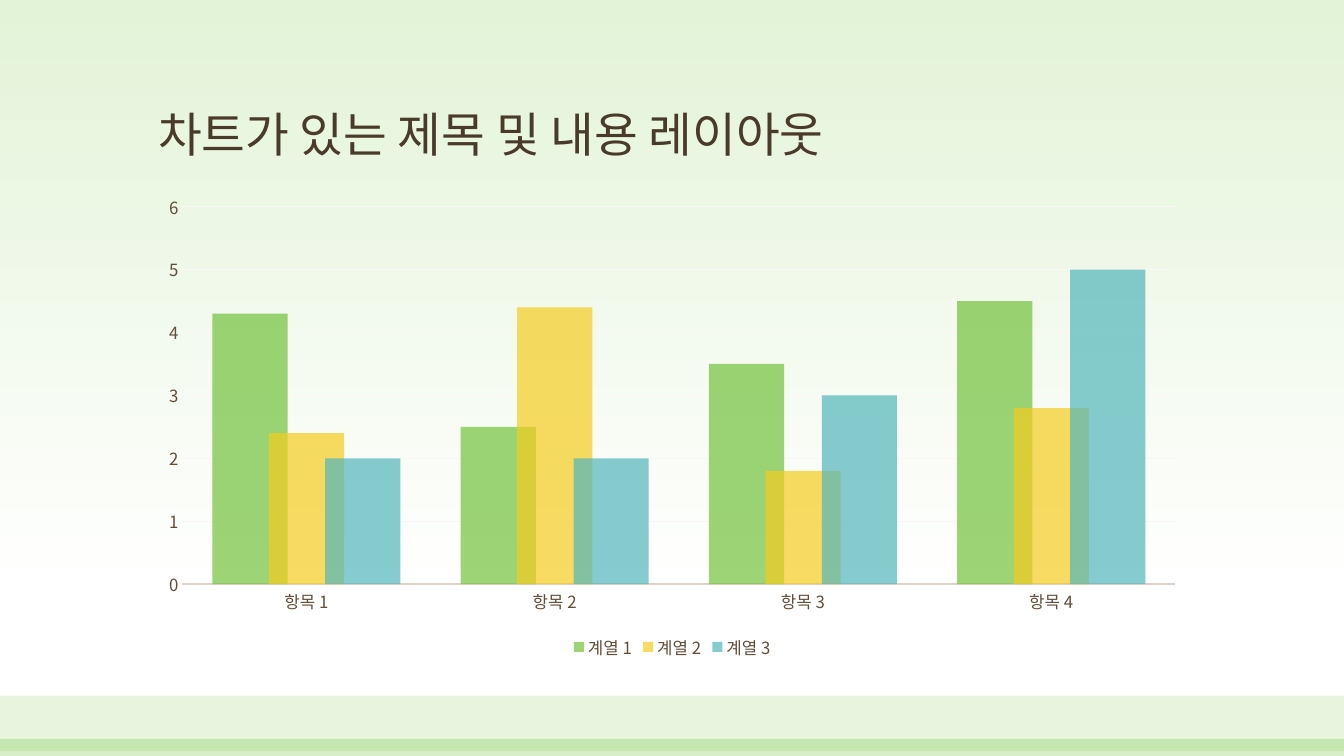
"""Build a slide with a title and a clustered column chart."""
from dataclasses import dataclass

import lxml.etree
import pptx
import pptx.chart.chart
import pptx.chart.data
import pptx.dml.color
import pptx.enum.chart
import pptx.enum.dml
import pptx.enum.shapes
import pptx.enum.text
import pptx.oxml.ns
import pptx.slide
import pptx.text.text
import pptx.util

Cm = pptx.util.Cm
Pt = pptx.util.Pt


@dataclass(frozen=True)
class Theme:
    font: str = "Noto Sans CJK KR"
    title: str = "4A3A2A"
    text: str = "624D38"
    sky: str = "E3F3D8"
    white: str = "FFFFFF"
    green: str = "72C23C"
    gold: str = "F4CC20"
    teal: str = "53B6BB"
    axis: str = "DFD2C6"
    grid: str = "F9F6F4"
    big: int = 34
    small: int = 12


@dataclass(frozen=True)
class Band:
    top: float
    height: float
    alpha: int


@dataclass(frozen=True)
class Series:
    name: str
    values: tuple[float, ...]
    color: str


THEME = Theme()
WIDTH, HEIGHT = 33.87, 19.05
LEFT, SPAN = 3.73, 26.42
BANDS = (Band(17.53, 1.4, 17), Band(18.62, 0.43, 28))
LABELS = [f"항목 {n}" for n in range(1, 5)]
SERIES = (
    Series("계열 1", (4.3, 2.5, 3.5, 4.5), THEME.green),
    Series("계열 2", (2.4, 4.4, 1.8, 2.8), THEME.gold),
    Series("계열 3", (2, 2, 3, 5), THEME.teal),
)


def tint(code: str) -> pptx.dml.color.RGBColor:
    return pptx.dml.color.RGBColor.from_string(code)


def fade(root: lxml.etree.ElementBase, alpha: int) -> None:
    for color in root.iter(pptx.oxml.ns.qn("a:srgbClr")):
        mark = lxml.etree.SubElement(color, pptx.oxml.ns.qn("a:alpha"))
        mark.set("val", str(alpha * 1000))


def style(font: pptx.text.text.Font, size: int, color: str) -> None:
    font.name = THEME.font
    font.size = Pt(size)
    font.bold = False
    font.color.rgb = tint(color)


def add_hangul(root: lxml.etree.ElementBase) -> None:
    for latin in list(root.iter(pptx.oxml.ns.qn("a:latin"))):
        east = lxml.etree.Element(pptx.oxml.ns.qn("a:ea"))
        east.set("typeface", THEME.font)
        latin.addnext(east)


def draw_ground(slide: pptx.slide.Slide) -> None:
    fill = slide.background.fill
    fill.gradient()
    fill.gradient_angle = 270
    stops = zip(fill.gradient_stops, (0, 0.79), (THEME.sky, THEME.white))
    for stop, place, color in stops:
        stop.position = place
        stop.color.rgb = tint(color)


def draw_band(slide: pptx.slide.Slide, band: Band) -> None:
    shape = slide.shapes.add_shape(
        pptx.enum.shapes.MSO_SHAPE.RECTANGLE,
        Cm(0), Cm(band.top), Cm(WIDTH), Cm(band.height),
    )
    shape.shadow.inherit = False
    shape.line.fill.background()
    shape.fill.solid()
    shape.fill.fore_color.rgb = tint(THEME.green)
    fade(shape.fill._xPr, band.alpha)


def draw_title(slide: pptx.slide.Slide, text: str) -> None:
    title = slide.shapes.title
    title.left, title.top = Cm(LEFT), Cm(1.22)
    title.width, title.height = Cm(SPAN), Cm(3.02)
    frame = title.text_frame
    frame.text = text
    frame.word_wrap = True
    frame.auto_size = pptx.enum.text.MSO_AUTO_SIZE.NONE
    frame.vertical_anchor = pptx.enum.text.MSO_ANCHOR.BOTTOM
    line = frame.paragraphs[0]
    line.alignment = pptx.enum.text.PP_ALIGN.LEFT
    line.line_spacing = 0.9
    style(line.font, THEME.big, THEME.title)
    add_hangul(line._p)


def set_axes(chart: pptx.chart.chart.Chart) -> None:
    base, scale = chart.category_axis, chart.value_axis
    for axis in (base, scale):
        axis.major_tick_mark = pptx.enum.chart.XL_TICK_MARK.NONE
        axis.minor_tick_mark = pptx.enum.chart.XL_TICK_MARK.NONE
        style(axis.tick_labels.font, THEME.small, THEME.text)
    base.format.line.color.rgb = tint(THEME.axis)
    base.format.line.width = Pt(1.25)
    scale.format.line.fill.background()
    scale.minimum_scale, scale.maximum_scale = 0, 6
    scale.major_unit = 1
    scale.has_major_gridlines = True
    grid = scale.major_gridlines.format.line
    grid.color.rgb = tint(THEME.grid)
    grid.width = Pt(0.75)


def draw_chart(slide: pptx.slide.Slide) -> None:
    data = pptx.chart.data.CategoryChartData()
    data.categories = LABELS
    for item in SERIES:
        data.add_series(item.name, item.values)
    chart = slide.shapes.add_chart(
        pptx.enum.chart.XL_CHART_TYPE.COLUMN_CLUSTERED,
        Cm(LEFT), Cm(4.65), Cm(SPAN), Cm(12.07), data,
    ).chart
    chart.has_title = False
    style(chart.font, THEME.small, THEME.text)
    set_axes(chart)
    chart.has_legend = True
    chart.legend.position = pptx.enum.chart.XL_LEGEND_POSITION.BOTTOM
    chart.legend.include_in_layout = False
    style(chart.legend.font, THEME.small, THEME.text)
    plot = chart.plots[0]
    plot.gap_width, plot.overlap = 80, 25
    plot.vary_by_categories = False
    for bars, item in zip(plot.series, SERIES):
        bars.invert_if_negative = False
        bars.format.fill.solid()
        bars.format.fill.fore_color.rgb = tint(item.color)
        fade(bars._element, 70)
    add_hangul(chart._chartSpace)


def main() -> None:
    deck = pptx.Presentation()
    deck.slide_width, deck.slide_height = Cm(WIDTH), Cm(HEIGHT)
    slide = deck.slides.add_slide(deck.slide_layouts.get_by_name("Title Only"))
    draw_ground(slide)
    for band in BANDS:
        draw_band(slide, band)
    draw_title(slide, "차트가 있는 제목 및 내용 레이아웃")
    draw_chart(slide)
    deck.save("out.pptx")


if __name__ == "__main__":
    main()
